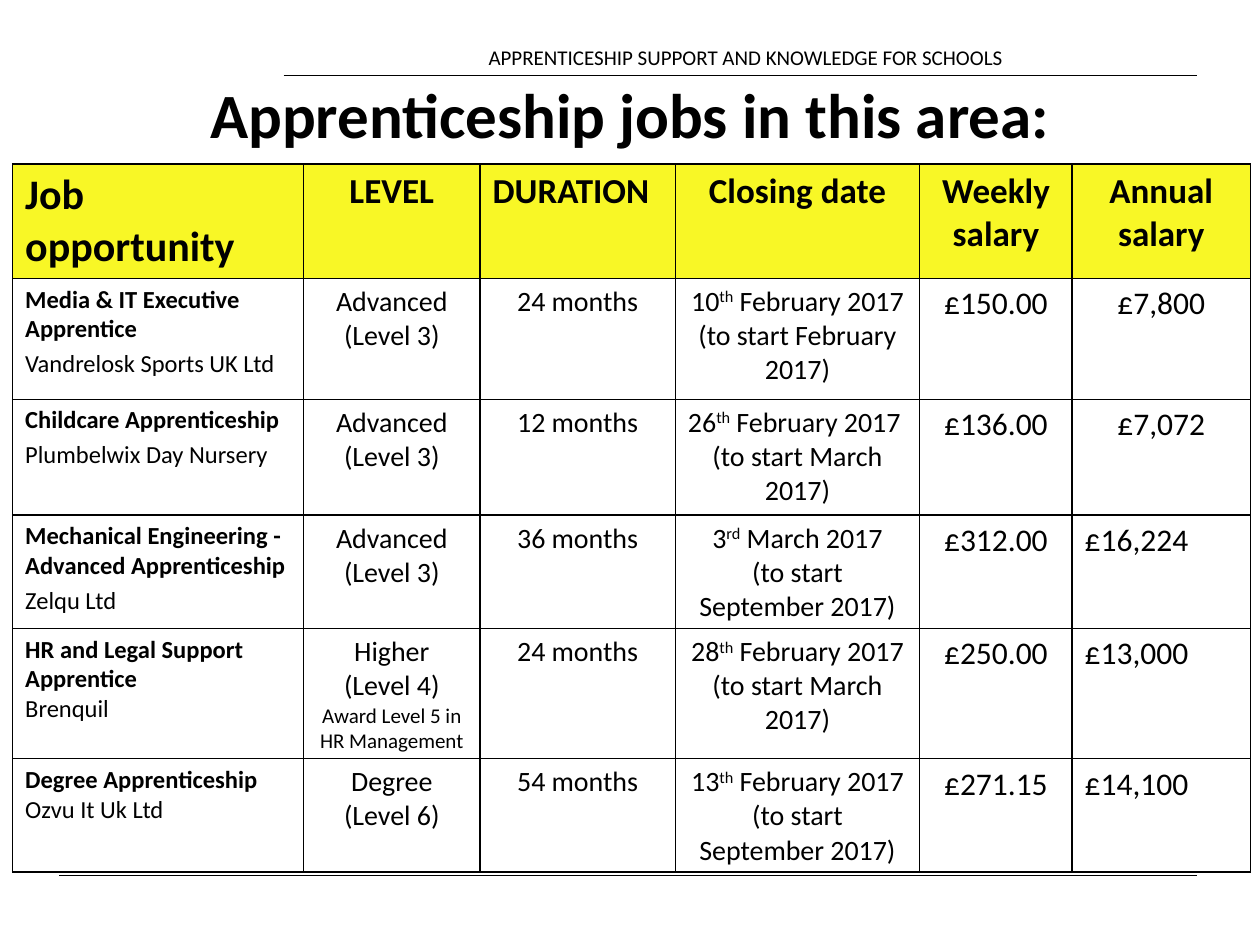
from lxml import etree
from pptx import Presentation
from pptx import util as u
from pptx.dml.color import RGBColor
from pptx.enum import shapes, text
from pptx.oxml.ns import qn

BLACK, YELLOW = "000000", "F8F726"
LEFT, CENTER, RIGHT = text.PP_ALIGN.LEFT, text.PP_ALIGN.CENTER, text.PP_ALIGN.RIGHT

HEADINGS = [
    ("Job opportunity", 24, LEFT), ("LEVEL", 20, CENTER), ("DURATION", 20, LEFT),
    ("Closing date", 20, CENTER), ("Weekly salary", 20, CENTER), ("Annual salary", 20, CENTER),
]
JOBS = [
    ("Media & IT Executive Apprentice", "Vandrelosk Sports UK Ltd", 2.8, ["Advanced", "(Level 3)"],
     24, ("10", "th", " February 2017"), "February", "£150.00", "£7,800", CENTER),
    ("Childcare Apprenticeship", "Plumbelwix Day Nursery", 2.8, ["Advanced", "(Level 3)"],
     12, ("26", "th", " February 2017 "), "March", "£136.00", "£7,072", CENTER),
    ("Mechanical Engineering - Advanced Apprenticeship", "Zelqu Ltd", 2.8, ["Advanced", "(Level 3)"],
     36, ("3", "rd", " March 2017"), "September", "£312.00", "£16,224", LEFT),
    ("HR and Legal Support Apprentice", "Brenquil", 0,
     ["Higher", "(Level 4)", "Award Level 5 in HR Management"],
     24, ("28", "th", " February 2017"), "March", "£250.00", "£13,000", LEFT),
    ("Degree Apprenticeship", "Ozvu It Uk Ltd", 0, ["Degree", "(Level 6)"],
     54, ("13", "th", " February 2017"), "September", "£271.15", "£14,100", LEFT),
]
COLUMN_WIDTHS = [166.3, 100.8, 111.6, 139.7, 87.1, 101.9]
ROW_HEIGHTS = [65.5, 69.1, 66.2, 61.9, 74.2, 62.6]


def color(code):
    return RGBColor.from_string(code)


def write(frame, content, size=16, bold=False, align=CENTER, before=0, superscript=None):
    first = frame.paragraphs[0]
    paragraph = frame.add_paragraph() if first.runs else first
    paragraph.alignment = align
    if before:
        paragraph.space_before = u.Pt(before)
    for part in [content] if isinstance(content, str) else content:
        run = paragraph.add_run()
        run.text = part
        run.font.name = "Calibri"
        run.font.size = u.Pt(size)
        run.font.bold = bold
        run.font.color.rgb = color(BLACK)
        if part == superscript:
            run.font._element.set("baseline", "30000")


class JobSlide:
    def __init__(self, deck):
        self.slide = deck.slides.add_slide(deck.slide_layouts[6])

    def rule(self, left, right, y):
        line = self.slide.shapes.add_connector(
            shapes.MSO_CONNECTOR.STRAIGHT, u.Pt(left), u.Pt(y), u.Pt(right), u.Pt(y))
        line.line.color.rgb = color(BLACK)
        line.line.width = u.Pt(0.5)
        etree.SubElement(line._element.spPr, qn("a:effectLst"))

    def label(self, content, left, top, width, height, **style):
        frame = self.slide.shapes.add_textbox(
            u.Pt(left), u.Pt(top), u.Pt(width), u.Pt(height)).text_frame
        frame.word_wrap = True
        frame.vertical_anchor = text.MSO_ANCHOR.MIDDLE
        write(frame, content, **style)

    def table(self, left, top, widths, heights):
        grid = self.slide.shapes.add_table(
            len(heights), len(widths), u.Pt(left), u.Pt(top),
            u.Pt(sum(widths)), u.Pt(sum(heights))).table
        for column, width in zip(grid.columns, widths):
            column.width = u.Pt(width)
        for row, height in zip(grid.rows, heights):
            row.height = u.Pt(height)
        for cell in grid.iter_cells():
            self.border(cell)
            cell.fill.background()
        return grid

    def border(self, cell):
        properties = cell._tc.get_or_add_tcPr()
        for side in ("a:lnL", "a:lnR", "a:lnT", "a:lnB"):
            edge = etree.SubElement(properties, qn(side), w=str(u.Pt(1)))
            fill = etree.SubElement(edge, qn("a:solidFill"))
            etree.SubElement(fill, qn("a:srgbClr"), val=BLACK)


def fill_headings(row):
    for cell, (heading, size, align) in zip(row.cells, HEADINGS):
        cell.fill.solid()
        cell.fill.fore_color.rgb = color(YELLOW)
        write(cell.text_frame, heading, size=size, bold=True, align=align)


def fill_job(row, job):
    title, employer, gap, levels, months, closing, start, weekly, annual, annual_align = job
    opportunity, level, duration, date, week, year = [cell.text_frame for cell in row.cells]
    write(opportunity, title, size=14, bold=True, align=LEFT)
    write(opportunity, employer, size=14, align=LEFT, before=gap)
    for index, line in enumerate(levels):
        write(level, line, size=16 if index < 2 else 12)
    write(duration, f"{months} months")
    write(date, closing, superscript=closing[1])
    write(date, f"(to start {start} 2017)")
    write(week, weekly, size=18)
    write(year, annual, size=18, align=annual_align)


def main():
    deck = Presentation()
    deck.slide_width, deck.slide_height = u.Pt(720), u.Pt(540)
    page = JobSlide(deck)
    page.rule(33.8, 684, 500.4)
    page.rule(162, 684, 43.2)
    page.label("APPRENTICESHIP SUPPORT AND KNOWLEDGE FOR SCHOOLS",
               265.7, 21.6, 314.6, 21.6, size=12, align=RIGHT)
    jobs = page.table(7.2, 93.6, COLUMN_WIDTHS, ROW_HEIGHTS)
    fill_headings(jobs.rows[0])
    for index, job in enumerate(JOBS, start=1):
        fill_job(jobs.rows[index], job)
    page.label("Apprenticeship jobs in this area:",
               113, 49, 563, 31, size=36, bold=True, align=LEFT)
    deck.save("out.pptx")


if __name__ == "__main__":
    main()
